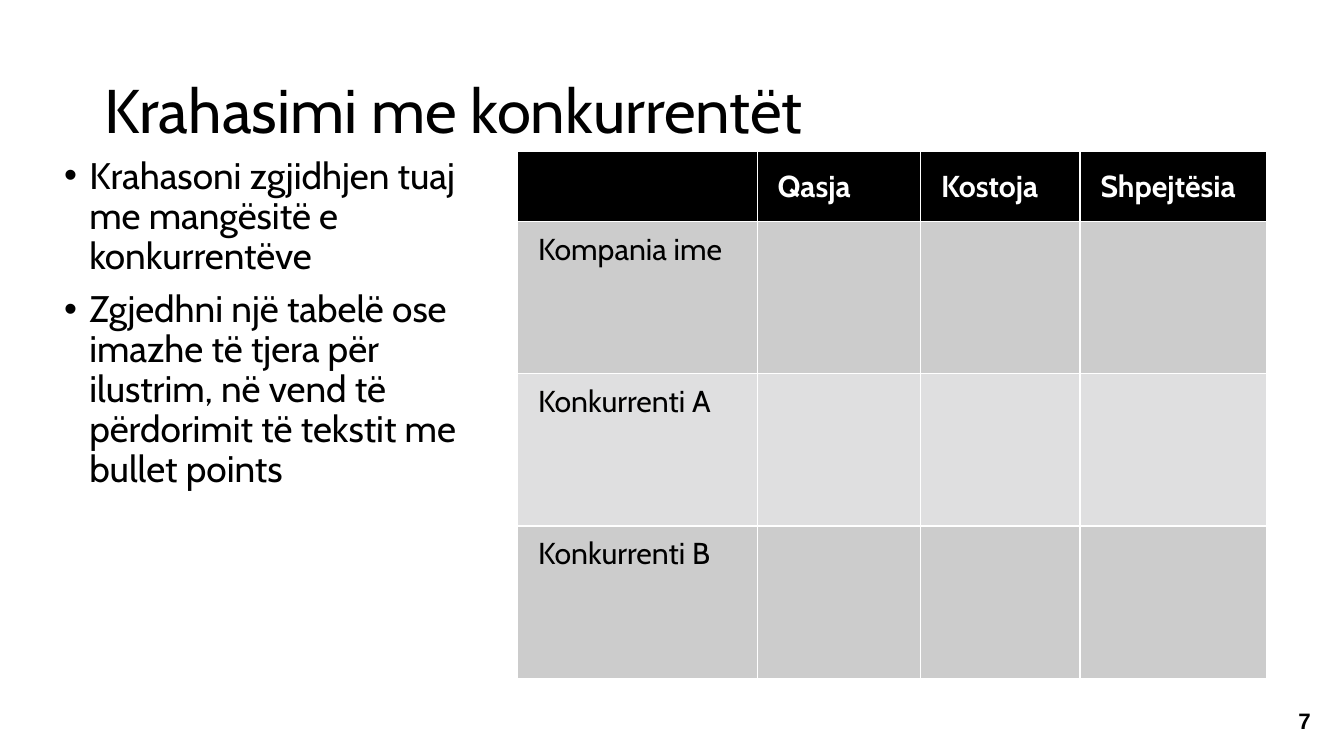
from lxml.etree import SubElement
from pptx import Presentation
from pptx.dml.color import RGBColor
from pptx.enum.text import MSO_ANCHOR, MSO_AUTO_SIZE, PP_ALIGN
from pptx.oxml import parse_xml
from pptx.oxml.ns import nsdecls, qn
from pptx.util import Cm, Pt

HUES = {"black": "000000", "white": "FFFFFF", "dark": "CCCCCC", "light": "DFDFE0"}


def write(para, text, size=18, hue="black", font="Cabin", bold=False,
          align=PP_ALIGN.LEFT, line=None, before=None):
    run = para.add_run()
    run.text = text
    run.font.size = Pt(size)
    run.font.name = font
    run.font.bold = bold
    run.font.color.rgb = RGBColor.from_string(HUES[hue])
    para.alignment = align
    if line:
        para.line_spacing = line
    if before is not None:
        para.space_before = Pt(before)


def place(shape, left, top, width, height, anchor):
    shape.left, shape.top = Cm(left), Cm(top)
    shape.width, shape.height = Cm(width), Cm(height)
    frame = shape.text_frame
    frame.word_wrap = True
    frame.auto_size = MSO_AUTO_SIZE.NONE
    frame.vertical_anchor = anchor
    return frame


deck = Presentation()
deck.slide_width, deck.slide_height = Cm(28.22), Cm(15.88)
slide = deck.slides.add_slide(deck.slide_layouts[1])

title = place(slide.shapes.title, 1.93, 0.84, 24.33, 3.07, MSO_ANCHOR.MIDDLE)
write(title.paragraphs[0], "Krahasimi me konkurrentët", size=36.7, line=0.9, before=0)

points = [
    "Krahasoni zgjidhjen tuaj me mangësitë e konkurrentëve",
    "Zgjedhni një tabelë ose imazhe të tjera për ilustrim, në vend të "
    "përdorimit të tekstit me bullet points",
]
body = place(slide.placeholders[1], 1.09, 3.18, 9.04, 9.96, MSO_ANCHOR.TOP)
for i, point in enumerate(points):
    para = body.add_paragraph() if i else body.paragraphs[0]
    write(para, point, size=22, line=0.9, before=8.3)
    props = para._p.get_or_add_pPr()
    props.set("marL", str(Cm(0.53)))
    props.set("indent", str(-Cm(0.53)))
    SubElement(props, qn("a:buFont"), typeface="Arial")
    SubElement(props, qn("a:buChar"), char="•")

rows = [
    ["", "Qasja", "Kostoja", "Shpejtësia"],
    ["Kompania ime", "", "", ""],
    ["Konkurrenti A", "", "", ""],
    ["Konkurrenti B", "", "", ""],
]
widths = [5.03, 3.43, 3.35, 3.91]
heights = [1.47, 3.2, 3.2, 3.2]
fills = ["black", "dark", "light", "dark"]
frame = slide.shapes.add_table(len(rows), len(widths), Cm(10.87), Cm(3.18),
                               Cm(sum(widths)), Cm(sum(heights)))
table = frame.table
for col, width in zip(table.columns, widths):
    col.width = Cm(width)
for r, row in enumerate(rows):
    table.rows[r].height = Cm(heights[r])
    for c, text in enumerate(row):
        cell = table.cell(r, c)
        cell.margin_left = cell.margin_right = Cm(0.43)
        cell.margin_top = cell.margin_bottom = Cm(0.2)
        cell.vertical_anchor = MSO_ANCHOR.TOP if r else MSO_ANCHOR.MIDDLE
        cell.fill.solid()
        cell.fill.fore_color.rgb = RGBColor.from_string(HUES[fills[r]])
        if text:
            write(cell.text_frame.paragraphs[0], text,
                  hue="black" if r else "white", bold=r == 0)
        props = cell._tc.get_or_add_tcPr()
        for i, side in enumerate(["lnL", "lnR", "lnT", "lnB"]):
            props.insert(i, parse_xml(
                f'<a:{side} {nsdecls("a")} w="{Pt(1)}"><a:solidFill>'
                f'<a:srgbClr val="{HUES["white"]}"/></a:solidFill></a:{side}>'))

box = slide.shapes.add_textbox(0, 0, 0, 0)
number = place(box, 26.57, 14.88, 1.65, 0.53, MSO_ANCHOR.BOTTOM)
number.margin_left = number.margin_right = 0
number.margin_top = number.margin_bottom = 0
write(number.paragraphs[0], "7", size=13.3, font="Arial", bold=True, align=PP_ALIGN.CENTER)

deck.save("out.pptx")
